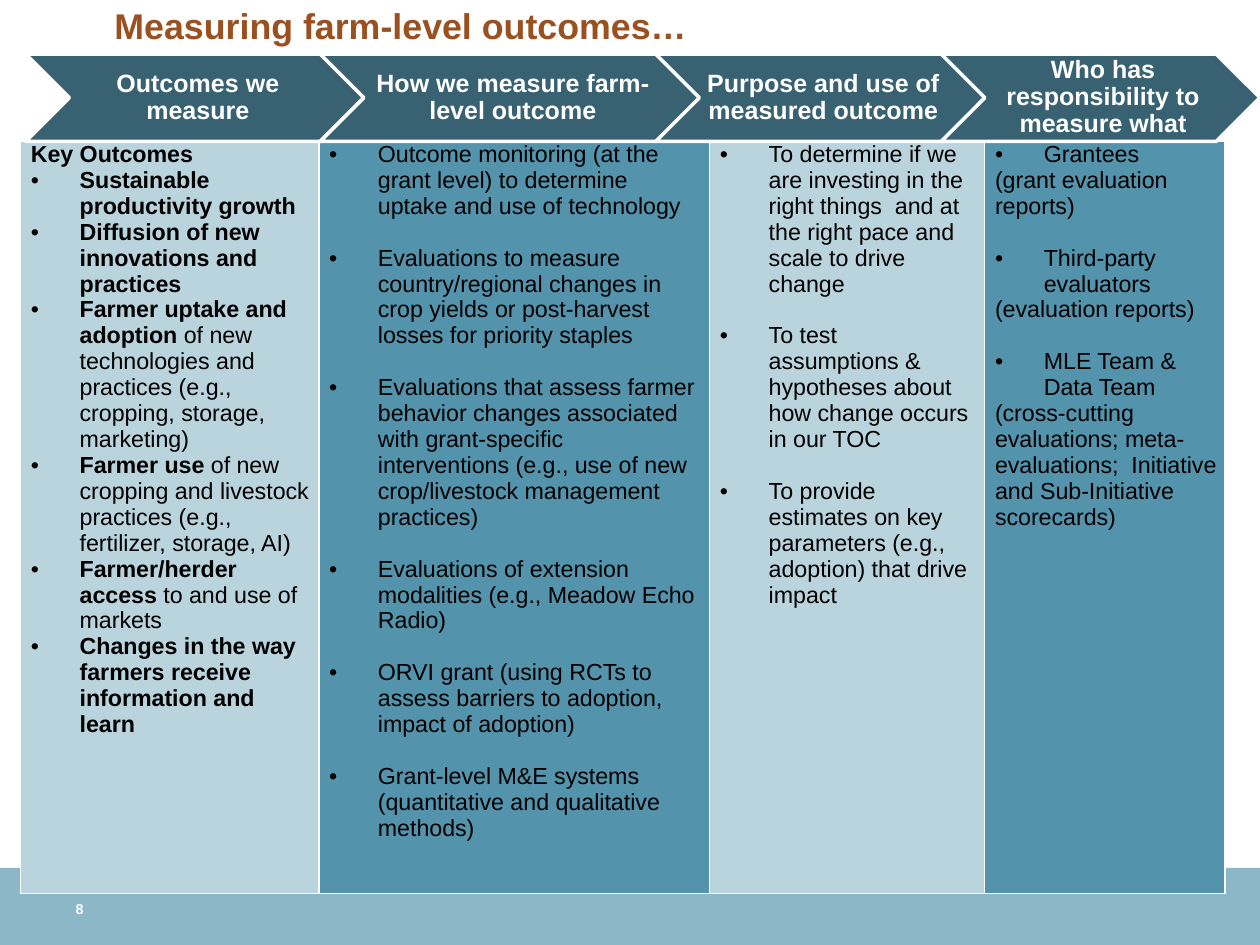
from dataclasses import dataclass
from itertools import accumulate
from typing import Any

from lxml import etree
from pptx import Presentation
from pptx import util as u
from pptx.dml.color import RGBColor
from pptx.enum import shapes, text
from pptx.oxml.ns import qn

LEFT, MID = text.PP_ALIGN.LEFT, text.PP_ALIGN.CENTER
TOP, CORE = text.MSO_ANCHOR.TOP, text.MSO_ANCHOR.MIDDLE
WHITE, BLACK, RUST = "FFFFFF", "000000", "9B501F"
BAND, DARK, PALE, DEEP = "8CB7C7", "386272", "BAD4DD", "5393AB"


def paint(part, tone):
    if hasattr(part, "solid"):
        part.solid()
        part = part.fore_color
    part.rgb = RGBColor.from_string(tone)


@dataclass
class Deck:
    """Holds the style and the current slide, and adds each kind of element."""
    slide: Any
    font: str = "Arial"
    indent: float = 0.38
    gap: float = 14.5

    def run(self, para, words, size, tone, bold=False):
        run = para.add_run()
        run.text = words
        run.font.name, run.font.size, run.font.bold = self.font, u.Pt(size), bold
        paint(run.font.color, tone)

    def frame(self, frame, anchor, pads):
        frame.word_wrap = True
        frame.auto_size = text.MSO_AUTO_SIZE.NONE
        frame.vertical_anchor = anchor
        (frame.margin_left, frame.margin_top,
         frame.margin_right, frame.margin_bottom) = map(u.Inches, pads)
        return frame.paragraphs[0]

    def title(self, box, words):
        head = self.slide.shapes.title
        head.left, head.top, head.width, head.height = map(u.Inches, box)
        para = self.frame(head.text_frame, TOP, (0.1, 0.05, 0.1, 0.05))
        para.alignment, para.line_spacing = LEFT, 0.9
        self.run(para, words, 20, RUST, True)

    def label(self, box, words):
        item = self.slide.shapes.add_textbox(*map(u.Inches, box))
        para = self.frame(item.text_frame, CORE, (0.1, 0.05, 0.1, 0.05))
        self.run(para, words, 8, WHITE, True)

    def shape(self, kind, box, fill):
        item = self.slide.shapes.add_shape(kind, *map(u.Inches, box))
        item.shadow.inherit = False
        paint(item.fill, fill)
        item.line.fill.background()
        return item

    def arrow(self, box, words):
        item = self.shape(shapes.MSO_SHAPE.CHEVRON, box, DARK)
        paint(item.line.fill, WHITE)
        item.line.width = u.Pt(2)
        para = self.frame(item.text_frame, CORE, (0.06, 0.02, 0.02, 0.02))
        para.alignment, para.line_spacing = MID, 0.9
        self.run(para, words, 14, WHITE, True)

    def bullet(self, para):
        props = para._p.get_or_add_pPr()
        props.set("marL", str(u.Inches(self.indent)))
        props.set("indent", str(-u.Inches(self.indent)))
        etree.SubElement(props, qn("a:buFont")).set("typeface", self.font)
        etree.SubElement(props, qn("a:buChar")).set("char", "•")

    def edge(self, cell):
        props = cell._tc.get_or_add_tcPr()
        for spot, side in enumerate("LRTB"):
            line = etree.Element(qn("a:ln" + side), w=str(u.Pt(1)))
            fill = etree.SubElement(line, qn("a:solidFill"))
            etree.SubElement(fill, qn("a:srgbClr")).set("val", WHITE)
            props.insert(spot, line)

    def cell(self, cell, fill, paras):
        paint(cell.fill, fill)
        self.edge(cell)
        cell.vertical_anchor = TOP
        cell.margin_left, cell.margin_right = u.Inches(0.08), u.Inches(0.06)
        cell.margin_top = cell.margin_bottom = 0
        for spot, (dot, space, runs) in enumerate(paras):
            para = cell.text_frame.add_paragraph() if spot else cell.text_frame.paragraphs[0]
            if space:
                para.space_before = u.Pt(self.gap)
            if dot:
                self.bullet(para)
            for words, bold in runs:
                self.run(para, words, 13, BLACK, bold)

    def table(self, left, top, height, widths, cells):
        box = map(u.Inches, (left, top, sum(widths), height))
        table = self.slide.shapes.add_table(1, len(widths), *box).table
        table.first_row = table.horz_banding = False
        for spot, (width, paras) in enumerate(zip(widths, cells)):
            table.columns[spot].width = u.Inches(width)
            self.cell(table.cell(0, spot), DEEP if spot % 2 else PALE, paras)


def item(strong, plain="", dot=True):
    return dot, False, [(words, bold) for words, bold in ((strong, True), (plain, False)) if words]


def spaced(*items):
    return [(True, spot > 0, [(words, False)]) for spot, words in enumerate(items)]


def noted(*pairs):
    return [row for spot, (name, note) in enumerate(pairs)
            for row in ((True, spot > 0, [(name, False)]), (False, False, [(note, False)]))]


OUTCOMES = [
    item("Key Outcomes", dot=False),
    item("Sustainable productivity growth"),
    item("Diffusion of new innovations and practices"),
    item("Farmer uptake and adoption ",
         "of new technologies and practices (e.g., cropping, storage, marketing)"),
    item("Farmer use",
         " of new cropping and livestock practices (e.g., fertilizer, storage, AI)"),
    item("Farmer/herder access", " to and use of markets"),
    item("Changes in the way farmers receive information and learn"),
]
METHODS = spaced(
    "Outcome monitoring (at the grant level) to determine uptake and use of technology",
    "Evaluations to measure country/regional changes in crop yields or post-harvest losses "
    "for priority staples",
    "Evaluations that assess farmer behavior changes associated with grant-specific  "
    "interventions (e.g., use of new crop/livestock management practices)",
    "Evaluations of extension modalities (e.g., Meadow Echo Radio)",
    "ORVI grant (using RCTs to assess barriers to adoption, impact of adoption)",
    "Grant-level M&E systems (quantitative and qualitative methods)",
)
PURPOSE = spaced(
    "To determine if we are investing in the right things  and at the right pace and scale "
    "to drive change",
    "To test  assumptions & hypotheses about how change occurs in our TOC",
    "To provide estimates on key parameters (e.g., adoption) that drive impact",
)
OWNERS = noted(
    ("Grantees", "(grant evaluation reports)"),
    ("Third-party evaluators", "(evaluation reports)"),
    ("MLE Team & Data Team", "(cross-cutting evaluations; meta-evaluations;  "
     "Initiative and Sub-Initiative scorecards)"),
)
HEADS = [
    ("Outcomes we measure", 2.64),
    ("How we measure farm-level outcome", 2.96),
    ("Purpose and use of measured outcome", 2.57),
    ("Who has responsibility to measure what", 2.48),
]


def main():
    show = Presentation()
    show.slide_width, show.slide_height = u.Inches(9.8), u.Inches(7.35)
    deck = Deck(show.slides.add_slide(show.slide_layouts[5]))
    deck.shape(shapes.MSO_SHAPE.RECTANGLE, (0, 6.75, 9.8, 0.6), BAND)
    deck.label((0.49, 6.87, 2.29, 0.39), "8")
    deck.table(0.16, 1.1, 5.85, (2.32, 3.04, 2.14, 1.87),
               (OUTCOMES, METHODS, PURPOSE, OWNERS))
    deck.title((0.79, 0.02, 5.1, 0.4), "Measuring farm-level outcomes…")
    lap = 0.35
    lefts = accumulate((width - lap for _, width in HEADS), initial=0.2)
    for left, (words, width) in zip(lefts, HEADS):
        deck.arrow((left, 0.42, width, 0.68), words)
    show.save("out.pptx")


if __name__ == "__main__":
    main()
